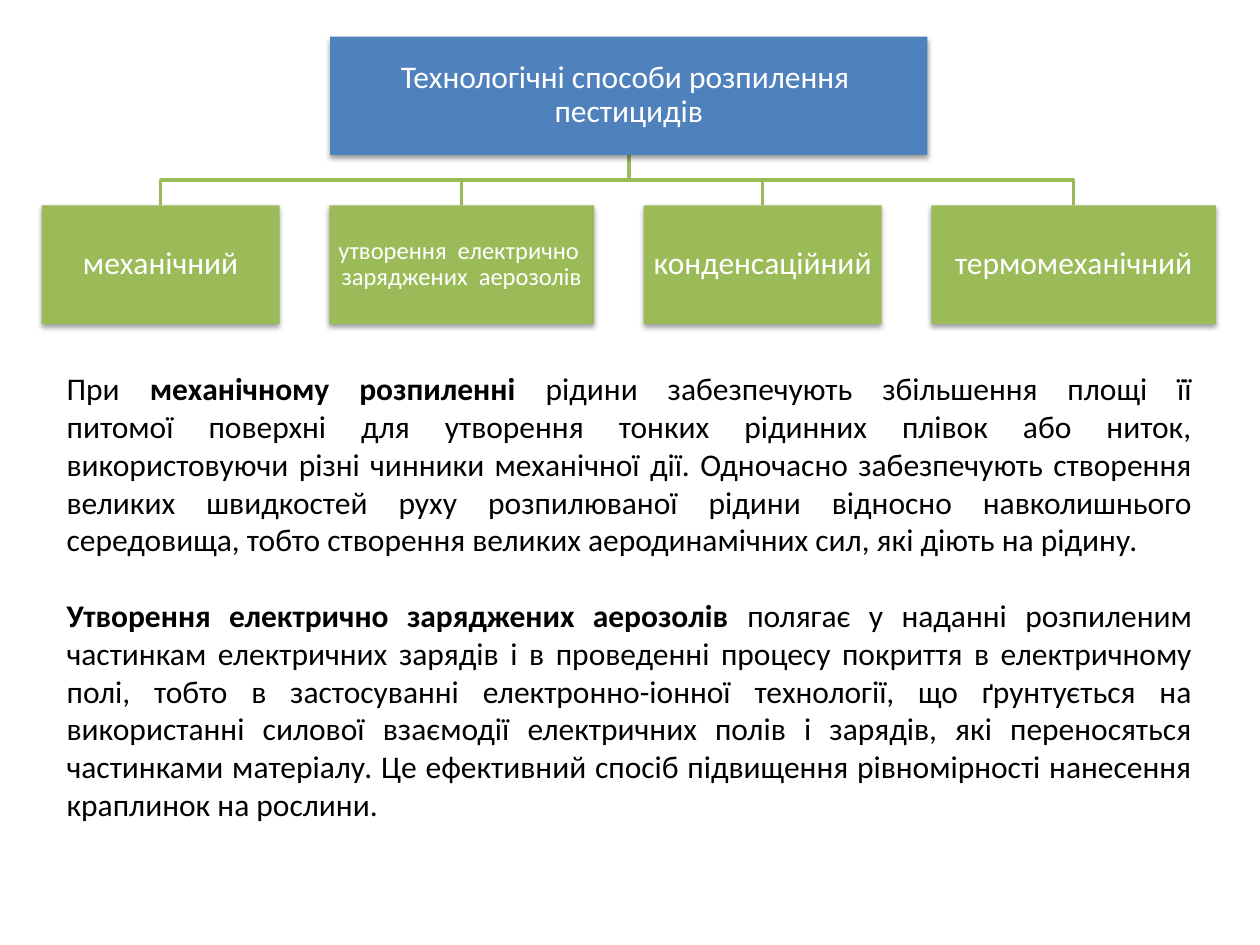
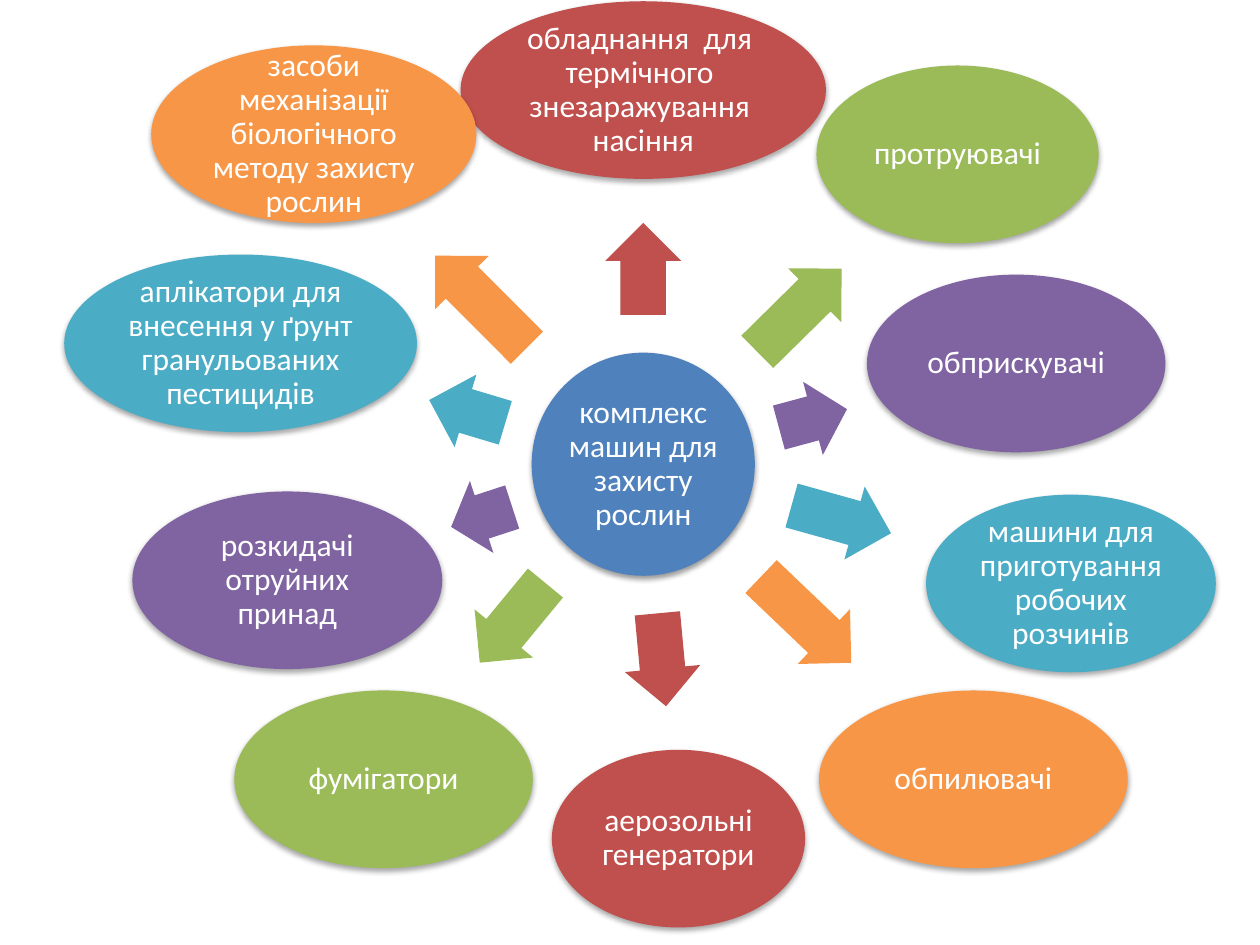
from itertools import cycle
from math import atan2, cos, degrees, hypot, sin

from lxml.etree import SubElement
from pptx import Presentation
from pptx.dml.color import RGBColor
from pptx.enum.shapes import MSO_SHAPE as Preset
from pptx.enum.text import MSO_ANCHOR as Anchor, PP_ALIGN as Align
from pptx.oxml.ns import qn
from pptx.util import Pt

COLORS = {
    "blue": "4F81BD",
    "red": "C0504D",
    "green": "9BBB59",
    "purple": "8064A2",
    "teal": "4BACC6",
    "orange": "F79646",
    "white": "FFFFFF",
    "black": "000000",
}
FONT = "Calibri"

ROOT_TEXT = "Технологічні способи розпилення  пестицидів"
METHODS = [
    ("механічний", 136, 18),
    ("утворення  електрично  заряджених  аерозолів", 151.2, 14),
    ("конденсаційний", 136, 18),
    ("термомеханічний", 162.7, 18),
]
ROW_LEFT, ROW_TOP, ROW_GAP = 23.8, 117.4, 28.4
ROOT_TOP, ROOT_WIDTH, BOX_HEIGHT = 20.9, 341.3, 67.7

EXPLANATIONS = [
    [
        ("При  ", False),
        ("механічному  розпиленні  ", True),
        ("рідини  забезпечують  збільшення  площі  її питомої поверхні для "
         "утворення тонких рідинних плівок або ниток, використовуючи різні "
         "чинники механічної дії. Одночасно забезпечують створення великих "
         "швидкостей руху розпилюваної рідини відносно навколишнього "
         "середовища, тобто створення великих аеродинамічних сил, які діють "
         "на рідину.", False),
    ],
    [
        ("Утворення електрично заряджених аерозолів ", True),
        ("полягає у наданні розпиленим частинкам електричних зарядів і в "
         "проведенні процесу покриття в електричному полі, тобто в "
         "застосуванні електронно-іонної технології, що ґрунтується на "
         "використанні силової взаємодії електричних полів і зарядів, які "
         "переносяться частинками матеріалу. Це ефективний спосіб підвищення "
         "рівномірності нанесення краплинок на рослини.", False),
    ],
]

HUB_TEXT = "комплекс машин для захисту рослин"
HUB_X, HUB_Y, HUB_SIZE = 367.6, 265.3, 127.5
OVAL_HEIGHT, ARROW_HEIGHT = 101.5, 43.3
ARROW_START = 0.41
MACHINE_COLORS = ["red", "green", "purple", "teal", "orange"]
# name, centre x, centre y, oval width, arrow length
MACHINES = [
    ("обладнання  для  термічного  знезаражування  насіння", 367.6, 51.5, 208.8, 52.6),
    ("протруювачі", 547.2, 88.2, 161.3, 67.7),
    ("обприскувачі", 580.7, 207.7, 170.6, 40.3),
    ("машини для приготування робочих розчинів", 612, 333.4, 165.6, 59),
    ("обпилювачі", 556.2, 445.3, 176.4, 71.3),
    ("аерозольні генератори", 387.7, 479.2, 144.7, 53.3),
    ("фумігатори", 219.2, 445.3, 170.6, 59),
    ("розкидачі отруйних принад", 164.2, 331.6, 177.1, 36.7),
    ("аплікатори для внесення у ґрунт гранульованих пестицидів", 137.5, 196.2, 201.6, 45.4),
    ("засоби механізації біологічного методу захисту рослин", 179.3, 76.7, 185.8, 74.2),
]


def rgb(color):
    return RGBColor.from_string(COLORS[color])


def style_span(span, size, color, bold=False):
    span.font.name = FONT
    span.font.size = Pt(size)
    span.font.bold = bold
    span.font.color.rgb = rgb(color)


def add_soft_shadow(shape, opacity):
    effects = shape._element.spPr.find(qn("a:effectLst"))
    shadow = SubElement(effects, qn("a:outerShdw"), blurRad=str(Pt(3.1)),
                        dist=str(Pt(1.7)), dir="5400000", rotWithShape="0")
    tint = SubElement(shadow, qn("a:srgbClr"), val=COLORS["black"])
    SubElement(tint, qn("a:alpha"), val=str(opacity * 1000))


def add_solid(page, preset, center_x, center_y, width, height, color):
    shape = page.shapes.add_shape(preset, Pt(center_x - width / 2), Pt(center_y - height / 2),
                                  Pt(width), Pt(height))
    shape.shadow.inherit = False
    shape.fill.solid()
    shape.fill.fore_color.rgb = rgb(color)
    shape.line.fill.background()
    return shape


def add_node(page, preset, text, center_x, center_y, width, height, color,
             size=18, inset=2, opacity=38):
    node = add_solid(page, preset, center_x, center_y, width, height, color)
    add_soft_shadow(node, opacity)
    frame = node.text_frame
    frame.word_wrap = True
    frame.vertical_anchor = Anchor.MIDDLE
    frame.margin_left = frame.margin_right = Pt(inset)
    frame.margin_top = frame.margin_bottom = Pt(inset)
    frame.text = text
    para = frame.paragraphs[0]
    para.alignment = Align.CENTER
    para.line_spacing = 0.9
    style_span(para.runs[0], size, "white")


def add_branch(page, start_x, start_y, end_x, end_y):
    middle_y = (start_y + end_y) / 2
    outline = page.shapes.build_freeform(Pt(start_x), Pt(start_y))
    corners = [(start_x, middle_y), (end_x, middle_y), (end_x, end_y)]
    outline.add_line_segments([(Pt(x), Pt(y)) for x, y in corners], close=False)
    branch = outline.convert_to_shape()
    branch.shadow.inherit = False
    branch.fill.background()
    branch.line.color.rgb = rgb("green")
    branch.line.width = Pt(2)


def add_prose(page, left, top, width, height, paragraphs):
    box = page.shapes.add_textbox(Pt(left), Pt(top), Pt(width), Pt(height))
    frame = box.text_frame
    frame.word_wrap = True
    for index, parts in enumerate(paragraphs):
        para = frame.add_paragraph() if index else frame.paragraphs[0]
        para.alignment = Align.JUSTIFY
        para.space_before = Pt(21.6 if index else 0)
        for text, bold in parts:
            span = para.add_run()
            span.text = text
            style_span(span, 18, "black", bold)


def add_machine(page, text, center_x, center_y, width, arrow_length, color):
    offset_x, offset_y = center_x - HUB_X, center_y - HUB_Y
    angle = atan2(offset_y, offset_x)
    distance = HUB_SIZE / 2 + (ARROW_START + 0.5) * arrow_length
    arrow = add_solid(page, Preset.RIGHT_ARROW, HUB_X + distance * cos(angle),
                      HUB_Y + distance * sin(angle), arrow_length, ARROW_HEIGHT, color)
    arrow.adjustments[0] = 0.6
    arrow.adjustments[1] = 0.5
    arrow.rotation = degrees(angle) % 360
    add_node(page, Preset.OVAL, text, center_x, center_y, width, OVAL_HEIGHT, color, opacity=35)


def build_methods(page):
    centers = []
    left = ROW_LEFT
    for _, width, _ in METHODS:
        centers.append(left + width / 2)
        left += width + ROW_GAP
    root_x = (ROW_LEFT + left - ROW_GAP) / 2
    for center in reversed(centers):
        add_branch(page, root_x, ROOT_TOP + BOX_HEIGHT, center, ROW_TOP)
    add_node(page, Preset.RECTANGLE, ROOT_TEXT, root_x, ROOT_TOP + BOX_HEIGHT / 2,
             ROOT_WIDTH, BOX_HEIGHT, "blue", inset=0.9)
    for (text, width, size), center in zip(METHODS, centers):
        add_node(page, Preset.RECTANGLE, text, center, ROW_TOP + BOX_HEIGHT / 2,
                 width, BOX_HEIGHT, "green", size=size, inset=0.9)
    add_prose(page, 31, 207.4, 657.4, 269.3, EXPLANATIONS)


def build_machines(page):
    add_node(page, Preset.OVAL, HUB_TEXT, HUB_X, HUB_Y, HUB_SIZE, HUB_SIZE, "blue")
    for machine, color in zip(MACHINES, cycle(MACHINE_COLORS)):
        add_machine(page, *machine, color)


def main():
    deck = Presentation()
    deck.slide_width, deck.slide_height = Pt(720), Pt(540)
    blank = deck.slide_layouts[6]
    for build in (build_methods, build_machines):
        build(deck.slides.add_slide(blank))
    deck.save("out.pptx")


if __name__ == "__main__":
    main()
